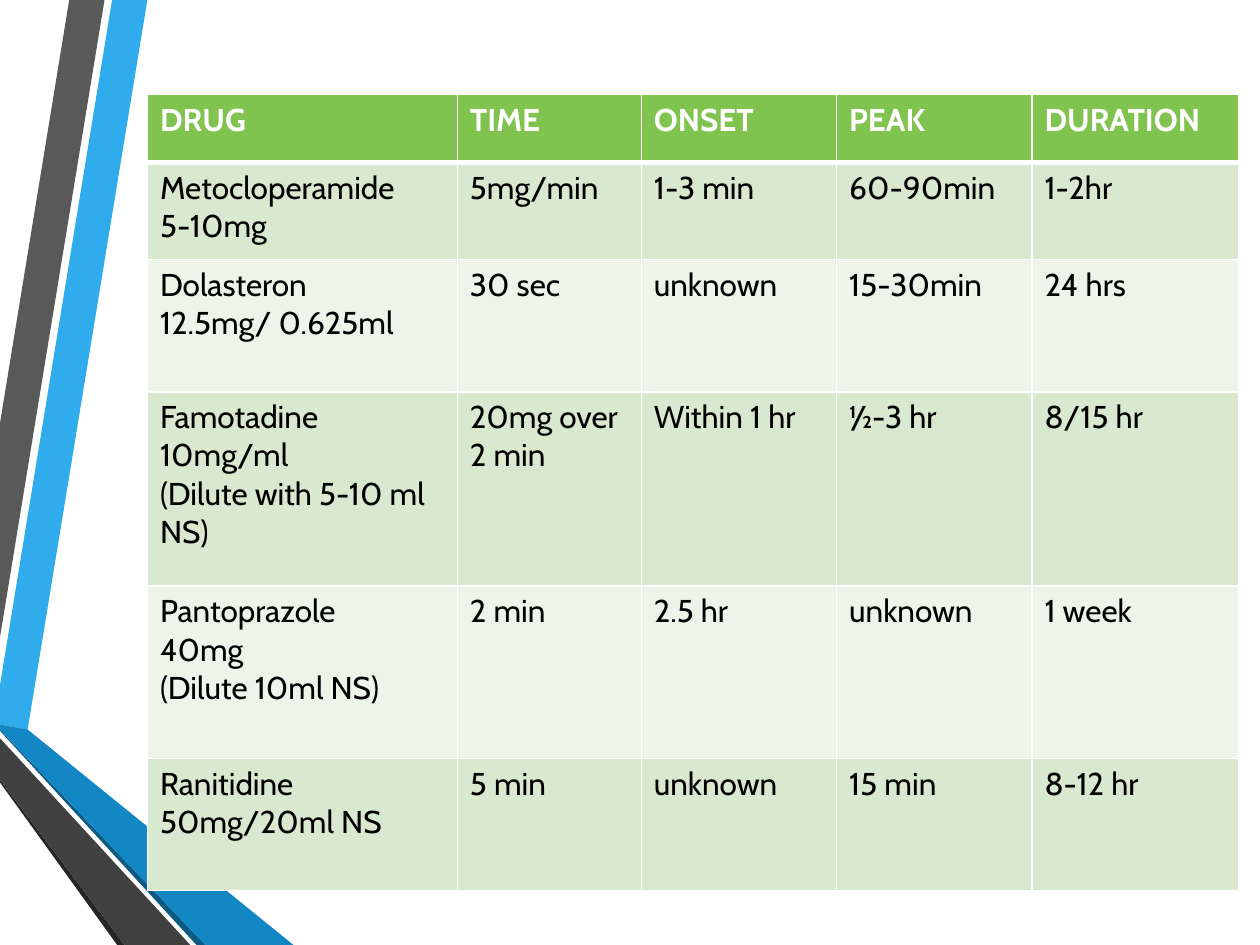
"""Builds a slide with a table of drug timings beside a folded ribbon."""
from lxml import etree
from pptx import Presentation
from pptx.dml.color import RGBColor
from pptx.oxml.ns import qn
from pptx.util import Inches, Pt

COLORS = {
    "sky": "30ACEC", "gray": "595959", "black edge": "262626",
    "navy edge": "0C5A82", "blue": "1287C3", "charcoal": "404040",
    "header": "80C34F", "odd": "D8E9D0", "even": "EDF5E9",
    "white": "FFFFFF", "text": "000000",
}
FONT = "Cabin"
WIDTH, HEIGHT = 10, 7.5
TABLE_LEFT, TABLE_TOP = 1.17, 0.75
COLUMNS = [2.46, 1.46, 1.55, 1.55, 1.64]
ROWS = [0.54, 0.77, 1.05, 1.54, 1.37, 1.05]
RIBBONS = [
    ("sky", [(0, 5.44), (0, 5.75), (0.22, 5.79), (1.17, 0), (0.89, 0)]),
    ("gray", [(0.83, 0), (0.55, 0), (0, 3.36), (0, 5.06)]),
    ("black edge", [(0, 6.19), (0, 6.21), (0.93, HEIGHT), (0.99, HEIGHT)]),
    ("navy edge", [(0, 5.79), (0, 5.8), (1.56, HEIGHT), (1.63, HEIGHT)]),
    ("blue", [(0, 5.79), (1.63, HEIGHT), (2.33, HEIGHT), (0.22, 5.79), (0, 5.75)]),
    ("charcoal", [(0, 6.19), (0.99, HEIGHT), (1.51, HEIGHT), (0, 5.86)]),
]
DRUGS = [
    ["DRUG", "TIME", "ONSET", "PEAK", "DURATION"],
    ["Metocloperamide\n5-10mg", "5mg/min", "1-3 min", "60-90min", "1-2hr"],
    ["Dolasteron\n12.5mg/ 0.625ml", "30 sec", "unknown", "15-30min", "24 hrs"],
    ["Famotadine\n10mg/ml\n(Dilute with 5-10 ml NS)", "20mg over 2 min",
     "Within 1 hr", "½-3 hr", "8/15 hr"],
    ["Pantoprazole\n40mg\n(Dilute 10ml NS)", "2 min", "2.5 hr", "unknown", "1 week"],
    ["Ranitidine\n50mg/20ml NS", "5 min", "unknown", "15 min", "8-12 hr"],
]


def rgb(name):
    return RGBColor.from_string(COLORS[name])


def add_borders(cell, widths):
    properties = cell._tc.get_or_add_tcPr()
    for side, width in widths.items():
        line = etree.SubElement(properties, qn(f"a:ln{side}"), w=str(Pt(width)))
        fill = etree.SubElement(line, qn("a:solidFill"))
        etree.SubElement(fill, qn("a:srgbClr"), val=COLORS["white"])


deck = Presentation()
deck.slide_width, deck.slide_height = Inches(WIDTH), Inches(HEIGHT)
page = deck.slides.add_slide(deck.slide_layouts[6])

for color, corners in RIBBONS:
    points = [(Inches(x), Inches(y)) for x, y in corners]
    outline = page.shapes.build_freeform(*points[0])
    outline.add_line_segments(points[1:], close=True)
    ribbon = outline.convert_to_shape()
    ribbon.shadow.inherit = False
    ribbon.fill.solid()
    ribbon.fill.fore_color.rgb = rgb(color)
    ribbon.line.fill.background()

table = page.shapes.add_table(
    len(ROWS), len(COLUMNS), Inches(TABLE_LEFT), Inches(TABLE_TOP),
    Inches(sum(COLUMNS)), Inches(sum(ROWS))).table
for column, width in zip(table.columns, COLUMNS):
    column.width = Inches(width)
for row, height in zip(table.rows, ROWS):
    row.height = Inches(height)

for row_index, entries in enumerate(DRUGS):
    is_header = row_index == 0
    band = "header" if is_header else "odd" if row_index % 2 else "even"
    for column_index, entry in enumerate(entries):
        cell = table.cell(row_index, column_index)
        add_borders(cell, {"L": 1, "R": 1, "T": 3 if row_index == 1 else 1,
                           "B": 3 if is_header else 1})
        cell.fill.solid()
        cell.fill.fore_color.rgb = rgb(band)
        frame = cell.text_frame
        for line_index, words in enumerate(entry.split("\n")):
            para = frame.add_paragraph() if line_index else frame.paragraphs[0]
            span = para.add_run()
            span.text = words
            span.font.name = FONT
            span.font.size = Pt(18)
            span.font.bold = is_header
            span.font.color.rgb = rgb("white" if is_header else "text")

deck.save("out.pptx")
